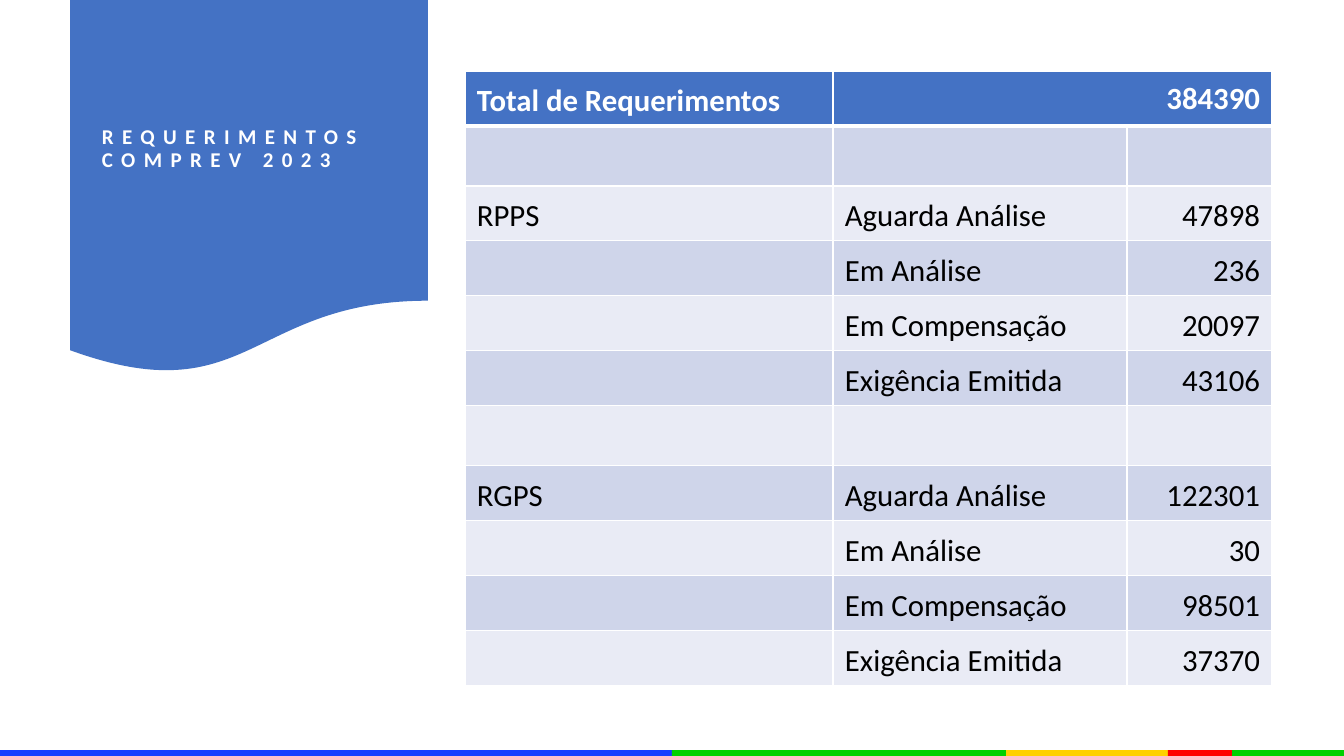
import pptx
import pptx.util
import pptx.dml.color
import pptx.enum.shapes
import pptx.enum.text
import lxml.etree

PX = 914400 / 100.8
SHAPE = pptx.enum.shapes.MSO_SHAPE
ANCHOR = pptx.enum.text.MSO_ANCHOR
ALIGN = pptx.enum.text.PP_ALIGN
BLUE, WHITE, BLACK = "4472C4", "FFFFFF", "000000"


def px(*lengths):
    return [pptx.util.Emu(round(length * PX)) for length in lengths]


def color(hex_code):
    return pptx.dml.color.RGBColor.from_string(hex_code)


deck = pptx.Presentation()
deck.slide_width, deck.slide_height = px(1344, 756)
slide = deck.slides.add_slide(deck.slide_layouts[6])

# Coloured footer stripes and the wavy banner
for preset, box, fill in [
    (SHAPE.RECTANGLE, (0, 750, 672, 6), "183EFF"),
    (SHAPE.RECTANGLE, (672, 750, 672, 6), "00D000"),
    (SHAPE.RECTANGLE, (1006, 750, 226, 6), "FFD000"),
    (SHAPE.RECTANGLE, (1168, 750, 64, 6), "FF0000"),
    (SHAPE.FLOWCHART_DOCUMENT, (70, 0, 358, 375), BLUE),
]:
    block = slide.shapes.add_shape(preset, *px(*box))
    block.shadow.inherit = False
    block.fill.solid()
    block.fill.fore_color.rgb = color(fill)
    block.line.fill.background()

# Title
title = slide.shapes.add_textbox(*px(92, 19, 314, 261)).text_frame
title.word_wrap = True
title.vertical_anchor = ANCHOR.MIDDLE
title.paragraphs[0].line_spacing = 0.9
heading = title.paragraphs[0].add_run()
heading.text = "REQUERIMENTOS COMPREV 2023"
heading.font.name = "Calibri"
heading.font.size = pptx.util.Pt(15)
heading.font.bold = True
heading.font.color.rgb = color(WHITE)
heading._r.get_or_add_rPr().set("spc", "600")

# Table of requests by regime and status
statuses = ["Aguarda Análise", "Em Análise", "Em Compensação", "Exigência Emitida"]
rows = [("Total de Requerimentos", "384390", "")]
for regime, counts in [
    ("RPPS", [47898, 236, 20097, 43106]),
    ("RGPS", [122301, 30, 98501, 37370]),
]:
    rows.append(("", "", ""))
    for i, (status, count) in enumerate(zip(statuses, counts)):
        rows.append((regime if i == 0 else "", status, str(count)))

requests = slide.shapes.add_table(len(rows), 3, *px(465, 71, 807, 615)).table
for column, width in zip(requests.columns, px(368, 294, 145)):
    column.width = width

for r, texts in enumerate(rows):
    header = r == 0
    requests.rows[r].height = px(55 if any(texts) else 60)[0]
    for c, text in enumerate(texts):
        cell = requests.cell(r, c)
        cell.fill.solid()
        cell.fill.fore_color.rgb = color(BLUE if header else ("E9EBF5", "CFD5EA")[r % 2])

        # White grid, heavier under the header
        thick_sides = {"lnB"} if header else {"lnT"} if r == 1 else set()
        cell_props = cell._tc.get_or_add_tcPr()
        for position, side in enumerate(("lnL", "lnR", "lnT", "lnB")):
            points = 3 if side in thick_sides else 1
            cell_props.insert(position, lxml.etree.fromstring(
                f'<a:{side} xmlns:a="http://schemas.openxmlformats.org/drawingml/2006/main" '
                f'w="{points * 12700}"><a:solidFill><a:srgbClr val="{WHITE}"/>'
                f'</a:solidFill></a:{side}>'))

        if not text:
            continue
        cell.margin_left, cell.margin_top, cell.margin_right, cell.margin_bottom = px(12, 6, 12, 6)
        cell.vertical_anchor = ANCHOR.MIDDLE if header and c else ANCHOR.BOTTOM
        paragraph = cell.text_frame.paragraphs[0]
        paragraph.alignment = ALIGN.RIGHT if text.isdigit() else ALIGN.LEFT
        entry = paragraph.add_run()
        entry.text = text
        entry.font.name = "Calibri"
        entry.font.size = pptx.util.Pt(22)
        entry.font.bold = header
        entry.font.color.rgb = color(WHITE if header else BLACK)

requests.cell(0, 1).merge(requests.cell(0, 2))

deck.save("out.pptx")
